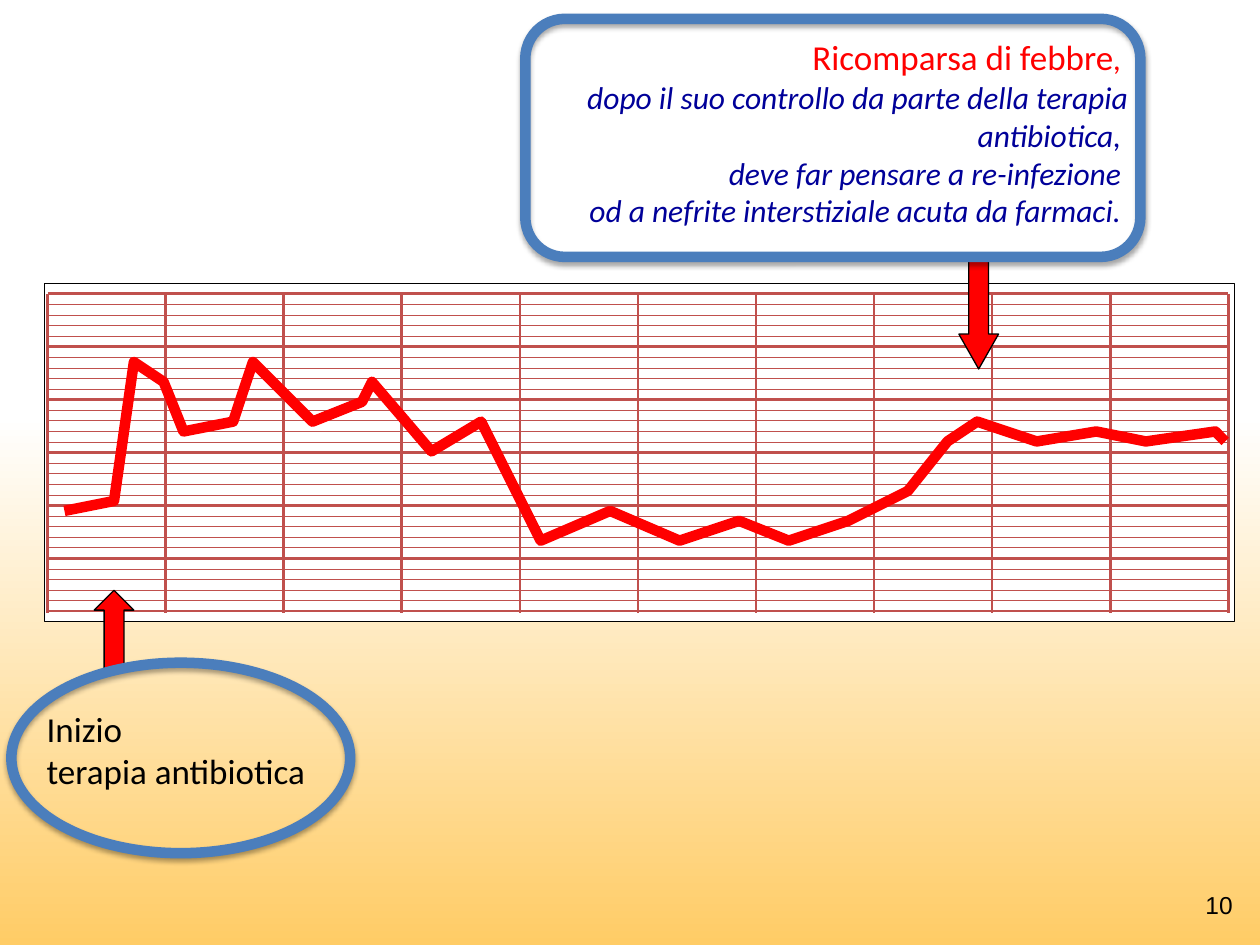
from lxml import etree
from pptx import Presentation
from pptx import util as u
from pptx.dml.color import RGBColor
from pptx.enum import shapes, text
from pptx.oxml.ns import qn

Cm = u.Cm
HUES = {"white": "FFFFFF", "sand": "FFCC66", "black": "000000", "red": "FF0000",
        "navy": "000099", "grid": "C0504D", "blue": "4B7EBC"}
KIND = shapes.MSO_SHAPE

# Fever curve: day and temperature points, in cm on the slide
FEVER = [(1.3, 10.3), (2.3, 10.1), (2.7, 7.3), (3.3, 7.7), (3.7, 8.7), (4.7, 8.5),
         (5.1, 7.3), (6.3, 8.5), (7.3, 8.1), (7.5, 7.7), (8.7, 9.1), (9.7, 8.5),
         (10.9, 10.9), (12.3, 10.3), (13.7, 10.9), (14.9, 10.5), (15.9, 10.9),
         (17.1, 10.5), (18.3, 9.9), (19.1, 8.9), (19.7, 8.5), (20.9, 8.9),
         (22.1, 8.7), (23.1, 8.9), (24.5, 8.7), (24.7, 8.9)]

HEAD = {"size": u.Pt(20), "name": "Calibri"}
NOTE = {"size": u.Pt(18), "name": "Calibri", "italic": True}
PAGE = {"size": u.Pt(14), "name": "Arial"}


def hue(name):
    return RGBColor.from_string(HUES[name])


def stroke(line, name, width):
    line.color.rgb = hue(name)
    line.width = u.Pt(width)


def shape(slide, kind, box, fill=None, line=None, width=0.75, adj=()):
    item = slide.shapes.add_shape(kind, *map(Cm, box))
    item.shadow.inherit = False
    if fill:
        item.fill.solid()
        item.fill.fore_color.rgb = hue(fill)
    else:
        item.fill.background()
    if line:
        stroke(item.line, line, width)
    else:
        item.line.fill.background()
    for i, val in enumerate(adj):
        item.adjustments[i] = val
    return item


def ring(slide, kind, box):
    """Thick blue outline with a soft shadow below it."""
    item = shape(slide, kind, box, line="blue", width=6)
    glow = etree.SubElement(
        item._element.spPr.find(qn("a:effectLst")), qn("a:outerShdw"),
        blurRad=str(u.Pt(3.1)), dist=str(u.Pt(1.8)), dir="5400000", rotWithShape="0")
    tint = etree.SubElement(glow, qn("a:srgbClr"), val=HUES["black"])
    etree.SubElement(tint, qn("a:alpha"), val="35000")


def rule(slide, ends, width):
    line = slide.shapes.add_connector(shapes.MSO_CONNECTOR.STRAIGHT, *map(Cm, ends))
    stroke(line.line, "grid", width)
    etree.SubElement(line._element.spPr, qn("a:effectLst"))


def write(item, paras, align, anchor=text.MSO_ANCHOR.TOP):
    """Each paragraph is a list of (words, colour, format) runs."""
    frame = item.text_frame
    frame.word_wrap = True
    frame.vertical_anchor = anchor
    for i, runs in enumerate(paras):
        para = frame.paragraphs[0] if i == 0 else frame.add_paragraph()
        para.alignment = align
        for words, tint, style in runs:
            run = para.add_run()
            run.text = words
            run.font.color.rgb = hue(tint)
            for key, val in style.items():
                setattr(run.font, key, val)


def label(slide, box, *args):
    write(slide.shapes.add_textbox(*map(Cm, box)), *args)


def grid(slide):
    left, top, right, low = 0.96, 5.92, 24.76, 12.32
    rows, cols = 30, 10
    for i in range(rows + 1):
        y = top + i * (low - top) / rows
        rule(slide, (left, y, right, y), 0.25 if i % 5 else 1.5)
    for i in range(cols + 1):
        x = left + i * (right - left) / cols
        rule(slide, (x, top, x, low + 0.04), 1.5)


def curve(slide):
    pts = [(Cm(x), Cm(y)) for x, y in FEVER]
    path = slide.shapes.build_freeform(*pts[0])
    path.add_line_segments(pts[1:], close=False)
    item = path.convert_to_shape()
    item.shadow.inherit = False
    item.fill.background()
    stroke(item.line, "red", 6)


def backdrop(slide):
    fill = slide.background.fill
    fill.gradient()
    fill.gradient_angle = 270
    for stop, name, pos in zip(fill.gradient_stops, ("white", "sand"), (0.44, 1)):
        stop.color.rgb = hue(name)
        stop.position = pos


def main():
    deck = Presentation()
    deck.slide_width, deck.slide_height = Cm(25.4), Cm(19.05)
    slide = deck.slides.add_slide(deck.slide_layouts[6])
    backdrop(slide)
    left, right = text.PP_ALIGN.LEFT, text.PP_ALIGN.RIGHT

    # Chart panel and warning text
    shape(slide, KIND.RECTANGLE, (0.89, 5.72, 24, 6.8), "white", "black", 0.25)
    note = shape(slide, KIND.RECTANGLE, (9, 0.6, 14, 4.2), "white")
    lines = ["dopo il suo controllo da parte della terapia antibiotica, ",
             "deve far pensare a re-infezione ",
             "od a nefrite interstiziale acuta da farmaci. "]
    write(note, [[("Ricomparsa di febbre", "red", HEAD), (", ", "red", NOTE)]]
          + [[(words, "navy", NOTE)] for words in lines], right)

    # Temperature chart
    grid(slide)
    curve(slide)

    # Start of therapy, return of fever
    shape(slide, KIND.UP_ARROW, (1.9, 11.9, 0.8, 1.6), "red", "black", adj=(0.5, 0.5))
    label(slide, (0.69, 14.13, 6.2, 1.96),
          [[(words, "black", HEAD)] for words in ("Inizio", "terapia antibiotica")], left)
    shape(slide, KIND.DOWN_ARROW, (19.33, 5.26, 0.8, 2.18), "red", "black", adj=(0.5, 0.88))

    # Page number
    label(slide, (19.18, 17.35, 5.92, 1.32), [[("10", "black", PAGE)]], right,
          text.MSO_ANCHOR.BOTTOM)

    # Frames around the two remarks
    ring(slide, KIND.OVAL, (0.23, 13.36, 6.83, 3.84))
    ring(slide, KIND.ROUNDED_RECTANGLE, (10.59, 0.38, 12.4, 4.8))
    deck.save("out.pptx")


if __name__ == "__main__":
    main()
